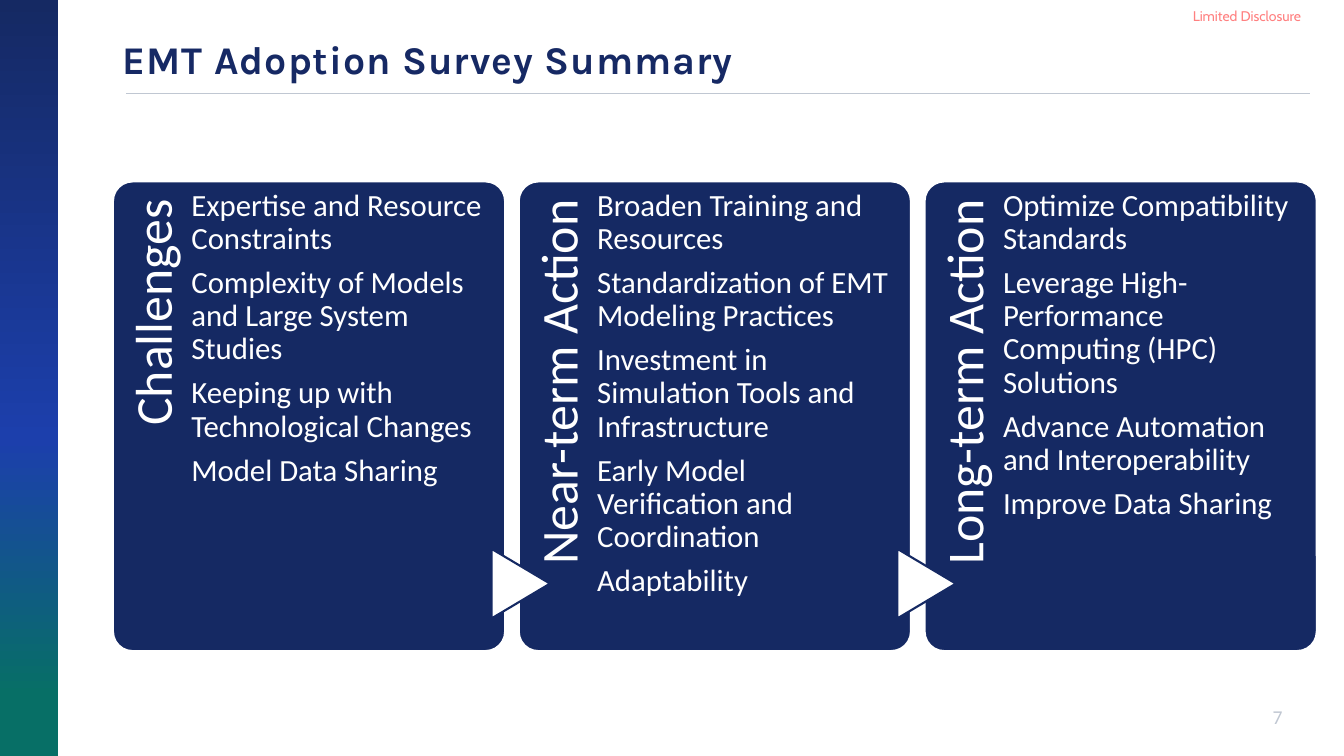
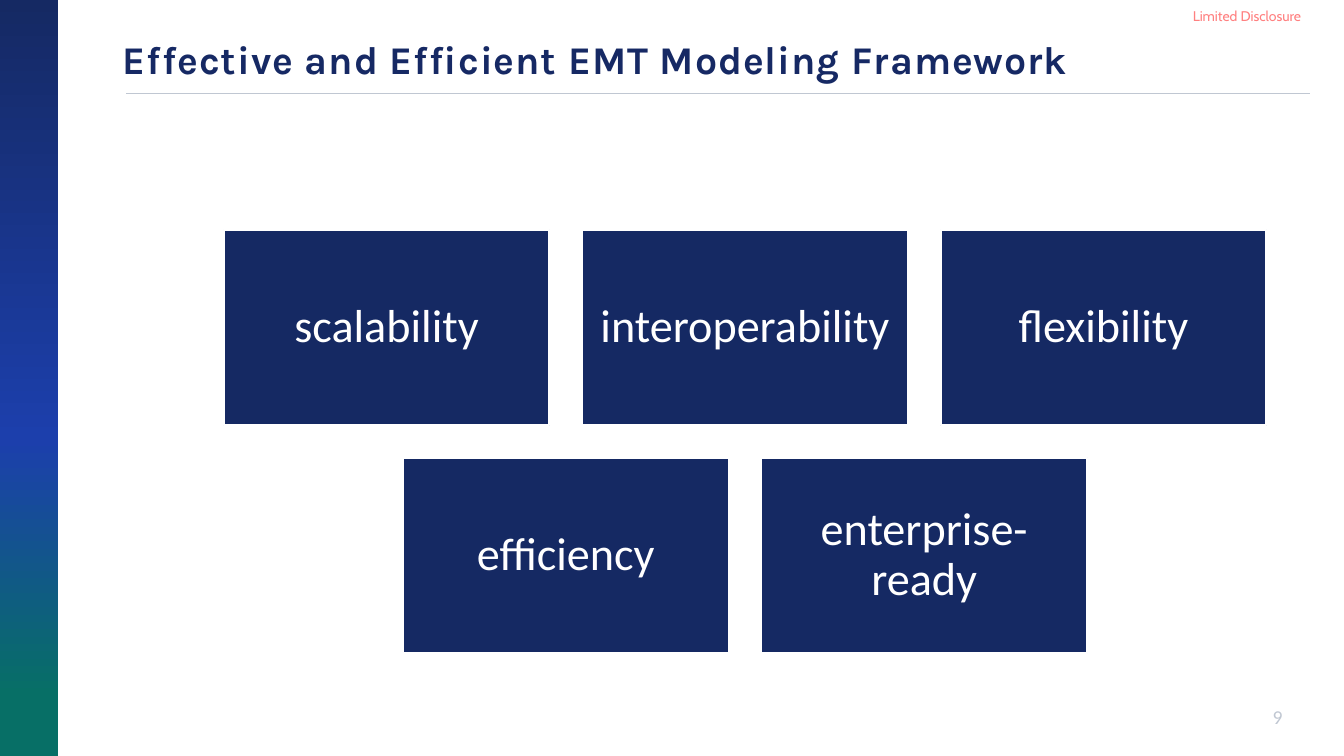
from lxml import etree
from pptx import Presentation
from pptx.dml.color import RGBColor
from pptx.enum.shapes import MSO_CONNECTOR, MSO_SHAPE
from pptx.enum.text import MSO_ANCHOR, PP_ALIGN
from pptx.oxml.ns import qn
from pptx.util import Inches, Pt

WIDTH, HEIGHT = 13.33, 7.5
NAVY, TITLE_NAVY, WHITE, GREY, PINK = "152963", "162964", "FFFFFF", "C0C7D2", "FF8080"
BAND_STOPS = [(0, NAVY), (58, "1C3FAC"), (92, "076F66")]

PANELS = [
    ("Challenges", [
        "Expertise and Resource Constraints",
        "Complexity of Models and Large System Studies",
        "Keeping up with Technological Changes",
        "Model Data Sharing"]),
    ("Near-term Action", [
        "Broaden Training and Resources",
        "Standardization of EMT Modeling Practices",
        "Investment in Simulation Tools and Infrastructure",
        "Early Model Verification and Coordination",
        "Adaptability"]),
    ("Long-term Action", [
        "Optimize Compatibility Standards",
        "Leverage High-Performance Computing (HPC) Solutions",
        "Advance Automation and Interoperability",
        "Improve Data Sharing"]),
]
QUALITIES = [["scalability", "interoperability", "flexibility"],
             ["efficiency", "enterprise-ready"]]


def rgb(color):
    return RGBColor.from_string(color)


def write(sp, lines, size, color, font="Calibri", bold=False, align=PP_ALIGN.LEFT,
          anchor=MSO_ANCHOR.TOP, insets=(0.1, 0.05, 0.1, 0.05), line=None,
          after=0, tracking=0, wrap=True):
    """Fill a shape with paragraphs; insets run left, top, right, bottom."""
    tf = sp.text_frame
    tf.word_wrap, tf.vertical_anchor = wrap, anchor
    (tf.margin_left, tf.margin_top,
     tf.margin_right, tf.margin_bottom) = map(Inches, insets)
    for i, text in enumerate(lines):
        p = tf.add_paragraph() if i else tf.paragraphs[0]
        p.alignment, p.space_after = align, Pt(after)
        if line:
            p.line_spacing = line
        r = p.add_run()
        r.text = text
        r.font.name, r.font.size, r.font.bold = font, Pt(size), bold
        r.font.color.rgb = rgb(color)
        if tracking:
            r.font._element.set("spc", str(tracking))


def add_text(s, box, lines, size, color, rotation=0, **style):
    sp = s.shapes.add_textbox(*map(Inches, box))
    sp.rotation = rotation
    write(sp, lines, size, color, **style)


def add_block(s, kind, box, fill, outline=None):
    sp = s.shapes.add_shape(kind, *map(Inches, box))
    sp.shadow.inherit = False
    sp.fill.solid()
    sp.fill.fore_color.rgb = rgb(fill)
    if outline:
        sp.line.color.rgb, sp.line.width = rgb(outline), Pt(1.5)
    else:
        sp.line.fill.background()
    return sp


def add_band(s, box):
    sp = add_block(s, MSO_SHAPE.RECTANGLE, box, NAVY)
    sp.fill.gradient()
    sp.fill.gradient_angle = 270
    stops = sp._element.spPr.find(qn("a:gradFill")).find(qn("a:gsLst"))
    for stop in list(stops):
        stops.remove(stop)
    for share, color in BAND_STOPS:
        stop = etree.SubElement(stops, qn("a:gs"), pos=str(share * 1000))
        etree.SubElement(stop, qn("a:srgbClr"), val=color)


def add_rule(s, left, right, y):
    ln = s.shapes.add_connector(MSO_CONNECTOR.STRAIGHT, *map(Inches, (left, y, right, y)))
    ln.line.color.rgb, ln.line.width = rgb(GREY), Pt(0.8)
    etree.SubElement(ln._element.spPr, qn("a:effectLst"))


def add_framed_slide(prs, title, number):
    """Band, marking, title, rule and page number shared by the slides."""
    s = prs.slides.add_slide(prs.slide_layouts[6])
    add_band(s, (0, 0, 0.58, HEIGHT))
    add_text(s, (11.83, 0.07, 1.15, 0.17), ["Limited Disclosure"], 10, PINK,
             font="Cabin", insets=(0, 0, 0, 0), wrap=False)
    add_rule(s, 1.25, 12.99, 0.93)
    add_text(s, (1.12, 0.3, 9.8, 0.63), [title], 28, TITLE_NAVY, font="Karla",
             bold=True, anchor=MSO_ANCHOR.MIDDLE, line=0.9, tracking=70)
    add_text(s, (9.39, 6.94, 3.43, 0.28), [str(number)], 14, GREY, align=PP_ALIGN.RIGHT)
    return s


def add_panel(s, box, heading, items):
    x, y, w, h = box
    sp = add_block(s, MSO_SHAPE.ROUNDED_RECTANGLE, box, NAVY, WHITE)
    sp.adjustments[0] = 0.05
    # Heading reads upwards in a strip along the left side
    strip, length = 0.2 * w, 0.82 * h
    add_text(s, (x + (strip - length) / 2, y + (length - strip) / 2, length, strip),
             [heading], 37, WHITE, rotation=270, align=PP_ALIGN.RIGHT,
             insets=(0, 0.14, 0.18, 0), line=0.9)
    add_text(s, (x + strip, y, 0.745 * w, h), items, 22, WHITE,
             insets=(0, 0.08, 0, 0), line=0.9, after=7.7)


def add_panel_row(s, box, panels):
    x, y, w, h = box
    panel_w = 3.89
    pitch = (w - panel_w) / (len(panels) - 1)
    for i, (heading, items) in enumerate(panels):
        add_panel(s, (x + i * pitch, y, panel_w, h), heading, items)
    # Arrowheads lie across the gaps between panels
    base, depth = 0.69, 0.58
    for i in range(1, len(panels)):
        left = x + i * pitch + 0.02 - base / 2
        sp = add_block(s, MSO_SHAPE.FLOWCHART_EXTRACT,
                       (left, y + 3.7, base, depth), WHITE, NAVY)
        sp.rotation = 90


def add_centred_rows(s, box, rows):
    x, y, w, h = box
    tile_w, tile_h = 3.23, 1.94
    gap = (w - 3 * tile_w) / 2
    pitch_y = (h - tile_h) / (len(rows) - 1)
    for i, row in enumerate(rows):
        row_w = len(row) * (tile_w + gap) - gap
        for j, text in enumerate(row):
            left = x + (w - row_w) / 2 + j * (tile_w + gap)
            sp = add_block(s, MSO_SHAPE.RECTANGLE,
                           (left, y + i * pitch_y, tile_w, tile_h), NAVY, WHITE)
            write(sp, [text], 33, WHITE, align=PP_ALIGN.CENTER,
                  anchor=MSO_ANCHOR.MIDDLE, insets=(0.14,) * 4, line=0.9)


def main():
    prs = Presentation()
    prs.slide_width, prs.slide_height = Inches(WIDTH), Inches(HEIGHT)

    # Survey summary
    s = add_framed_slide(prs, "EMT Adoption Survey Summary", 7)
    add_panel_row(s, (1.12, 1.8, 11.94, 4.66), PANELS)

    # Framework qualities
    s = add_framed_slide(prs, "Effective and Efficient EMT Modeling Framework", 9)
    add_centred_rows(s, (2.22, 2.28, 10.34, 4.2), QUALITIES)

    prs.save("out.pptx")


if __name__ == "__main__":
    main()
